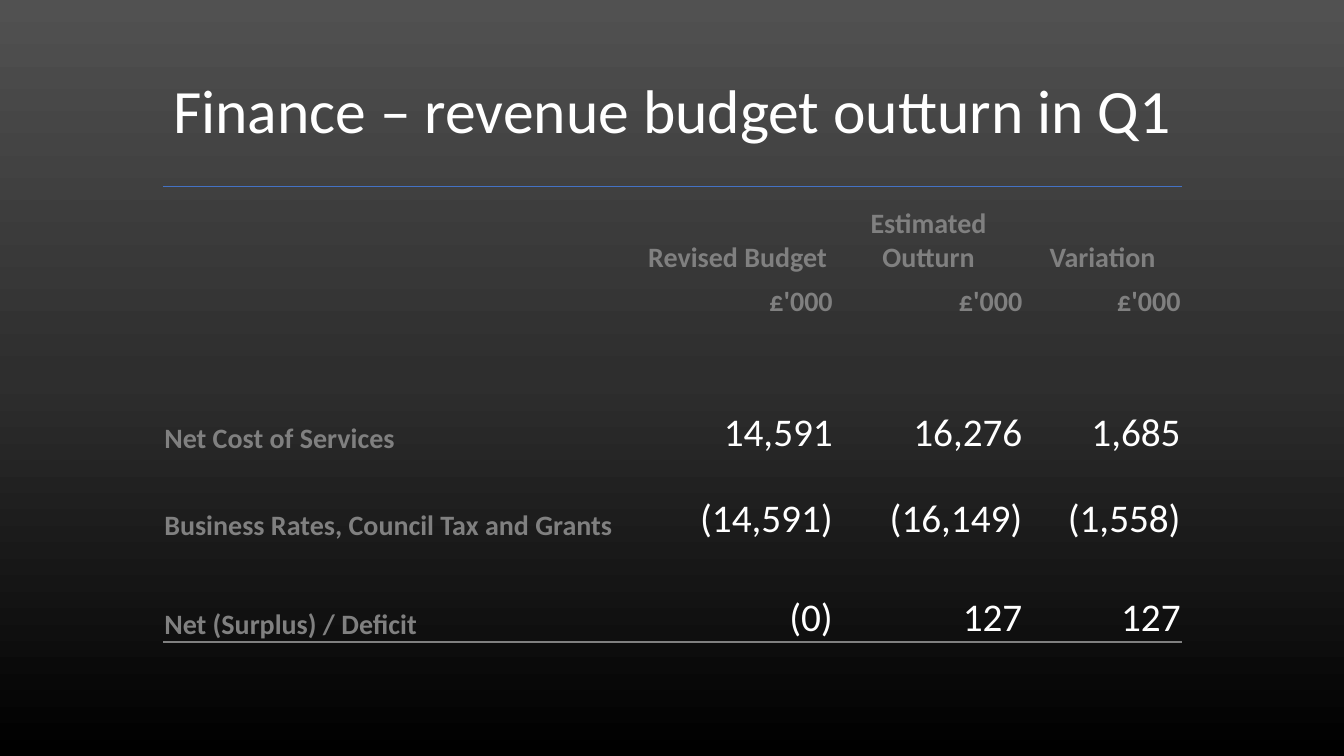
from copy import deepcopy

from lxml.etree import SubElement
from pptx import Presentation
from pptx.dml.color import RGBColor
from pptx.enum.text import MSO_ANCHOR, PP_ALIGN
from pptx.oxml.ns import qn
from pptx.util import Inches, Pt

COLORS = {
    "top": "515151",
    "middle": "2E2E2E",
    "bottom": "000000",
    "text": "FFFFFF",
    "label": "808080",
    "rule": "4472C4",
}
NO_STYLE = "{2D5ABB26-0587-4C30-8999-92F81FD0307C}"
COLS = [4.74, 1.91, 1.88, 1.57]
HEIGHTS = [0.88, 0.44, 0.44, 0.44, 0.48, 0.86, 0.49, 0.49]
ROWS = {
    0: ["", "Revised Budget", "Estimated Outturn", "Variation"],
    1: ["", "£'000", "£'000", "£'000"],
    4: ["Net Cost of Services", "14,591", "16,276", "1,685"],
    5: ["Business Rates, Council Tax and Grants", "(14,591)", "(16,149)", "(1,558)"],
    7: ["Net (Surplus) / Deficit", "(0)", "127", "127"],
}


class Deck:
    """Holds the style and the current slide."""

    font = "Calibri"

    def __init__(self):
        self.prs = Presentation()
        self.prs.slide_width = Inches(13.33)
        self.prs.slide_height = Inches(7.5)
        self.slide = self.prs.slides.add_slide(self.prs.slide_layouts[6])

    def background(self, names):
        fill = self.slide.background.fill
        fill.gradient()
        fill.gradient_angle = 270
        gs_list = self.slide.element.find(".//" + qn("a:gsLst"))
        gs_list.insert(1, deepcopy(gs_list[0]))
        for i, (stop, name) in enumerate(zip(fill.gradient_stops, names)):
            stop.position = i / (len(names) - 1)
            stop.color.rgb = RGBColor.from_string(COLORS[name])

    def set_text(self, tf, text, size, color, align, bold=False):
        tf.text = text
        p = tf.paragraphs[0]
        p.alignment = align
        for r in p.runs:
            r.font.name = self.font
            r.font.size = Pt(size)
            r.font.bold = bold
            r.font.color.rgb = RGBColor.from_string(COLORS[color])

    def title(self, text, left, top, width, height):
        sp = self.slide.shapes.add_textbox(*map(Inches, (left, top, width, height)))
        tf = sp.text_frame
        tf.word_wrap = True
        tf.vertical_anchor = MSO_ANCHOR.MIDDLE
        self.set_text(tf, text, 44, "text", PP_ALIGN.CENTER)
        tf.paragraphs[0].line_spacing = 0.9

    def border(self, cell, side, color):
        tc_pr = cell._tc.get_or_add_tcPr()
        ln = SubElement(tc_pr, qn("a:" + side), w=str(Pt(1)))
        fill = SubElement(ln, qn("a:solidFill"))
        SubElement(fill, qn("a:srgbClr"), val=COLORS[color])
        tc_pr.insert(0, ln)

    def cell(self, cell, text, row, col):
        cell.fill.background()
        cell.vertical_anchor = MSO_ANCHOR.BOTTOM
        cell.margin_left = cell.margin_right = cell.margin_top = Inches(0.01)
        cell.margin_bottom = 0
        label = row < 2 or col == 0
        size, color = (20, "label") if label else (28, "text")
        align = PP_ALIGN.RIGHT
        if row == 0:
            align = PP_ALIGN.CENTER
        elif col == 0:
            align = PP_ALIGN.LEFT
        self.set_text(cell.text_frame, text, size, color, align, label)

    def table(self, left, top, cols, heights, rows):
        tbl = self.slide.shapes.add_table(
            len(heights), len(cols), Inches(left), Inches(top),
            Inches(sum(cols)), Inches(sum(heights))).table
        tbl.first_row = tbl.horz_banding = False
        tbl._tbl.tblPr.find(qn("a:tableStyleId")).text = NO_STYLE
        for column, width in zip(tbl.columns, cols):
            column.width = Inches(width)
        for i, height in enumerate(heights):
            tbl.rows[i].height = Inches(height)
            for j, text in enumerate(rows.get(i, [""] * len(cols))):
                self.cell(tbl.cell(i, j), text, i, j)
        for j in range(len(cols)):
            self.border(tbl.cell(0, j), "lnT", "rule")
            self.border(tbl.cell(len(heights) - 1, j), "lnB", "label")


def main():
    deck = Deck()
    deck.background(["top", "middle", "bottom"])
    deck.title("Finance – revenue budget outturn in Q1", 0.92, 0.4, 11.5, 1.45)
    deck.table(1.62, 1.85, COLS, HEIGHTS, ROWS)
    deck.prs.save("out.pptx")


if __name__ == "__main__":
    main()
